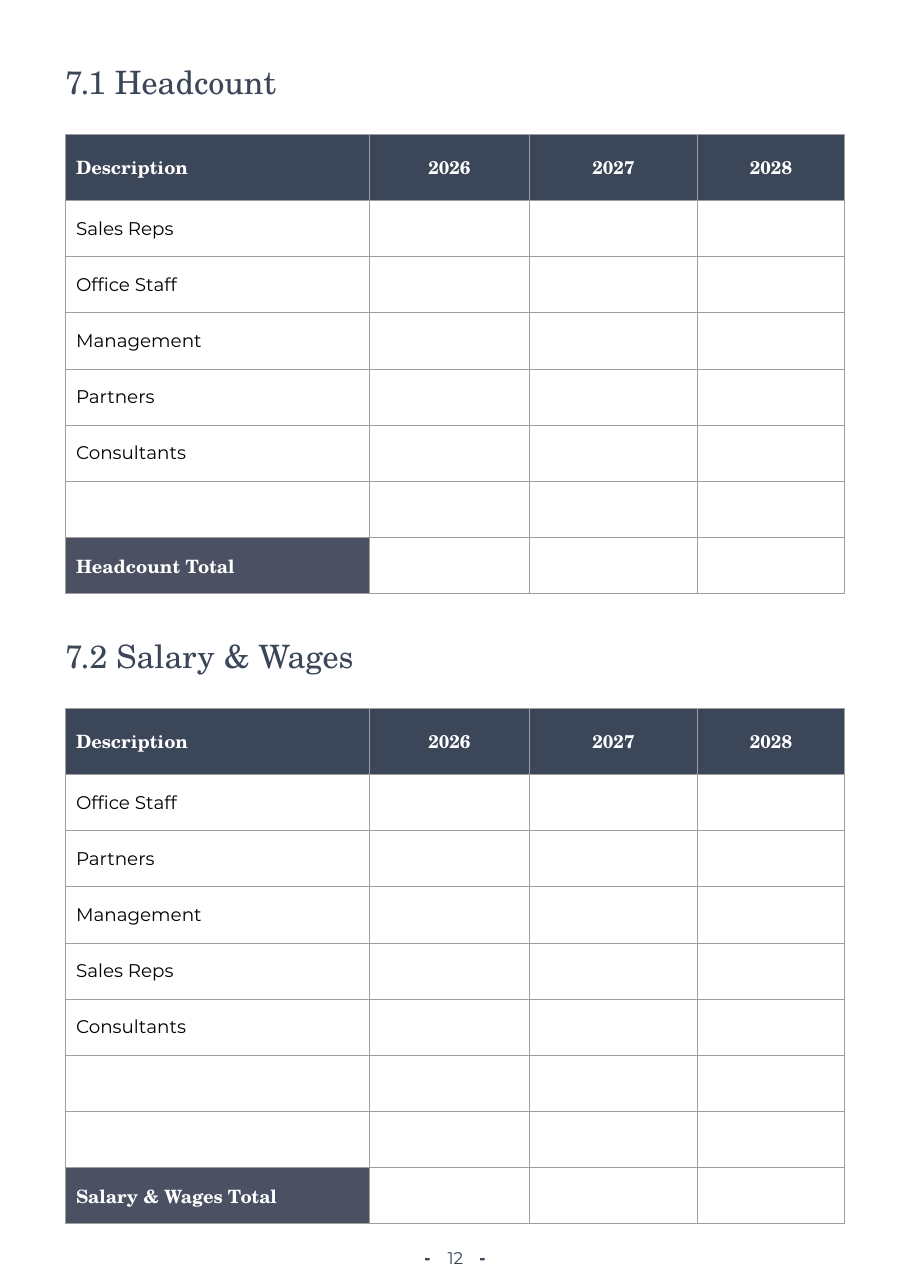
from lxml import etree
from pptx import Presentation
from pptx.dml.color import RGBColor
from pptx.enum import shapes, text
from pptx.oxml import ns
from pptx.util import Inches, Pt

SERIF, SANS = "TeX Gyre Schola", "Montserrat"
NAVY, SLATE, GRID, WHITE, BLACK = "3B4658", "4B5163", "9E9E9E", "FFFFFF", "000000"
MARGIN, CONTENT_WIDTH = 0.59, 7.09
COLUMNS = [2.76, 1.46, 1.52, 1.34]
HEADER_HEIGHT, ROW_HEIGHT = 0.6, 0.51
HEADER = ["Description", "2026", "2027", "2028"]


def color(hex_value):
    return RGBColor.from_string(hex_value)


def write(frame, words, size=12, font=SANS, ink=BLACK, bold=False, align=text.PP_ALIGN.LEFT):
    paragraph = frame.paragraphs[0]
    paragraph.alignment = align
    run = paragraph.add_run()
    run.text = words
    run.font.size = Pt(size)
    run.font.name = font
    run.font.bold = bold
    run.font.color.rgb = color(ink)


def add_label(slide, box, words, **style):
    frame = slide.shapes.add_textbox(*map(Inches, box)).text_frame
    frame.word_wrap = True
    frame.margin_left = frame.margin_right = frame.margin_top = frame.margin_bottom = 0
    write(frame, words, **style)


def fill_cell(cell, fill, words="", **style):
    """Give the cell its fill, grid lines and text."""
    cell.fill.solid()
    cell.fill.fore_color.rgb = color(fill)
    properties = cell._tc.get_or_add_tcPr()
    for position, side in enumerate(("lnL", "lnR", "lnT", "lnB")):
        line = etree.Element(ns.qn(f"a:{side}"), w=str(Pt(0.75)))
        solid = etree.SubElement(line, ns.qn("a:solidFill"))
        etree.SubElement(solid, ns.qn("a:srgbClr"), val=GRID)
        properties.insert(position, line)
    if words:
        cell.vertical_anchor = text.MSO_ANCHOR.MIDDLE
        cell.margin_left = cell.margin_right = Inches(0.1)
        cell.margin_top = cell.margin_bottom = Inches(0.1)
        write(cell.text_frame, words, **style)


def add_section(slide, left, top, heading, items, total):
    """Place a heading and, below it, a yearly table that ends in a total row."""
    add_label(slide, (left, top, CONTENT_WIDTH, 0.35), heading, size=21, font=SERIF, ink=NAVY)
    labels = items + [total]
    height = HEADER_HEIGHT + ROW_HEIGHT * len(labels)
    box = map(Inches, (left, top + 0.65, sum(COLUMNS), height))
    table = slide.shapes.add_table(len(labels) + 1, len(COLUMNS), *box).table
    table.first_row = table.horz_banding = False
    for column, width in zip(table.columns, COLUMNS):
        column.width = Inches(width)
    for number, row in enumerate(table.rows):
        row.height = Inches(ROW_HEIGHT if number else HEADER_HEIGHT)

    strong = dict(font=SERIF, ink=WHITE, bold=True)
    for number, title in enumerate(HEADER):
        align = text.PP_ALIGN.CENTER if number else text.PP_ALIGN.LEFT
        fill_cell(table.cell(0, number), NAVY, title, align=align, **strong)
    for number, label in enumerate(labels, start=1):
        if number == len(labels):
            fill_cell(table.cell(number, 0), SLATE, label, **strong)
        else:
            fill_cell(table.cell(number, 0), WHITE, label)
        for year in range(1, len(COLUMNS)):
            fill_cell(table.cell(number, year), WHITE)


def add_page_number(slide, left, top, number):
    """Place the number between two short dashes."""
    add_label(slide, (left + 0.1, top, 0.35, 0.19), number, size=11, ink=NAVY,
              align=text.PP_ALIGN.CENTER)
    for offset in (0, 0.5):
        box = map(Inches, (left + offset, top + 0.1, 0.04, 0.02))
        dash = slide.shapes.add_shape(shapes.MSO_SHAPE.RECTANGLE, *box)
        dash.shadow.inherit = False
        dash.fill.solid()
        dash.fill.fore_color.rgb = color(NAVY)
        dash.line.fill.background()


def main():
    deck = Presentation()
    deck.slide_width, deck.slide_height = Inches(8.27), Inches(11.69)
    slide = deck.slides.add_slide(deck.slide_layouts[6])
    add_section(slide, MARGIN, 0.57, "7.1 Headcount",
                ["Sales Reps", "Office Staff", "Management", "Partners", "Consultants", ""],
                "Headcount Total")
    add_section(slide, MARGIN, 5.78, "7.2 Salary & Wages",
                ["Office Staff", "Partners", "Management", "Sales Reps", "Consultants", "", ""],
                "Salary & Wages Total")
    add_page_number(slide, 3.86, 11.32, "12")
    deck.save("out.pptx")


if __name__ == "__main__":
    main()
